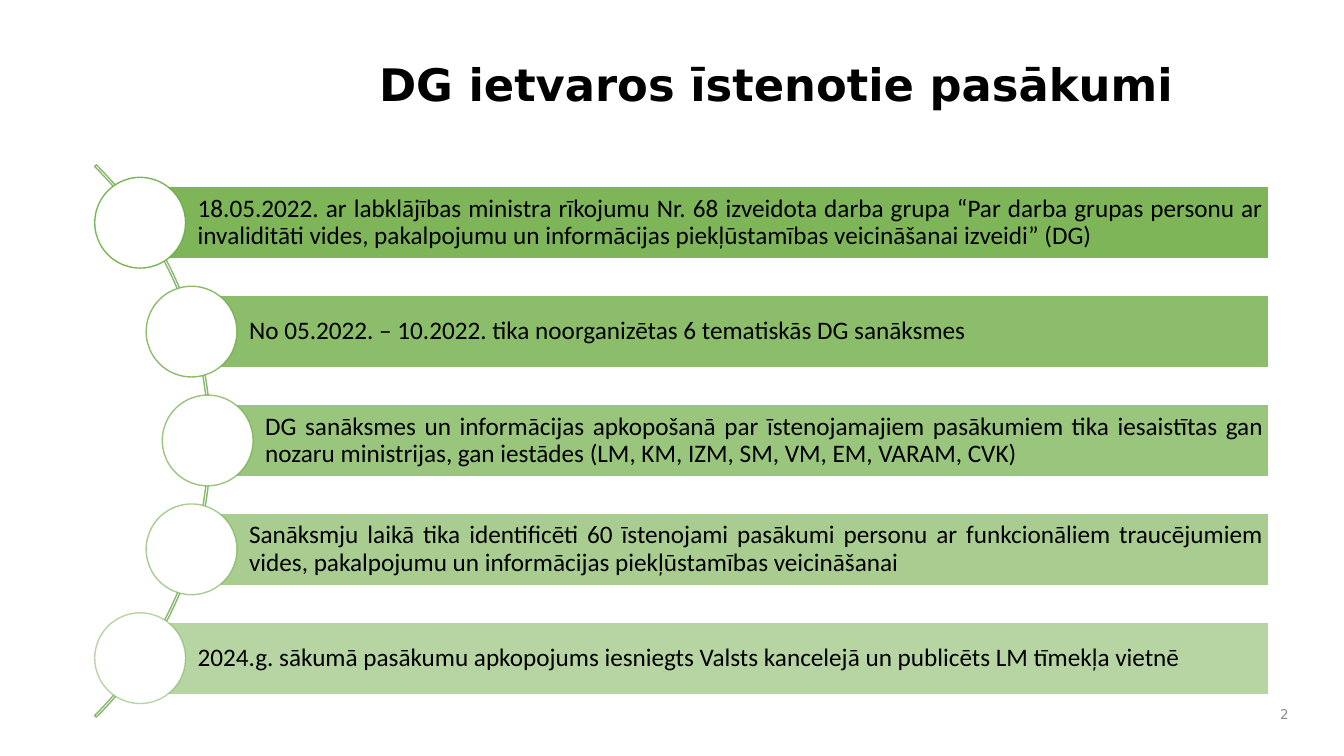
"""Builds the slide listing the activities carried out by the working group."""
from pptx import Presentation, util as u
from pptx.dml.color import RGBColor
from pptx.enum import shapes, text
from pptx.oxml.ns import qn
from lxml import etree

GREEN, WHITE = "70AD47", "FFFFFF"
BAR_RIGHT, BAR_HEIGHT, CIRCLE, STEP, FIRST_CENTER = 12.58, 0.72, 0.9, 1.08, 2.21

deck = Presentation()
deck.slide_width, deck.slide_height = u.Inches(13.33), u.Inches(7.5)
slide = deck.slides.add_slide(deck.slide_layouts[6])


def paint(fill, color, opacity=100):
    fill.solid()
    fill.fore_color.rgb = RGBColor.from_string(color)
    if opacity < 100:
        tint = fill._xPr.find(qn("a:solidFill"))[0]
        etree.SubElement(tint, qn("a:alpha"), val=str(opacity * 1000))


def write(shape, words, size, font="DejaVu Sans", color="000000", bold=False,
          align=text.PP_ALIGN.LEFT, spacing=1.0, insets=(0.1, 0.05, 0.1, 0.05)):
    frame = shape.text_frame
    frame.word_wrap = True
    frame.vertical_anchor = text.MSO_ANCHOR.MIDDLE
    (frame.margin_left, frame.margin_top,
     frame.margin_right, frame.margin_bottom) = map(u.Inches, insets)
    paragraph = frame.paragraphs[0]
    paragraph.alignment, paragraph.line_spacing = align, spacing
    run = paragraph.add_run()
    run.text = words
    run.font.size, run.font.name, run.font.bold = u.Pt(size), font, bold
    run.font.color.rgb = RGBColor.from_string(color)


title = slide.shapes.add_textbox(*map(u.Inches, (2.82, 0.42, 9.76, 0.89)))
write(title, "DG ietvaros īstenotie pasākumi", 32, bold=True,
      align=text.PP_ALIGN.CENTER, spacing=0.9)

arc = slide.shapes.add_shape(shapes.MSO_SHAPE.BLOCK_ARC,
                             *map(u.Inches, (-5.66, 0.5, 7.75, 7.75)))
for index, value in enumerate((189, 27, 0.003)):
    arc.adjustments[index] = value
arc.shadow.inherit = False
arc.fill.background()
paint(arc.line.fill, "88B76F")
arc.line.width = u.Pt(1)

activities = [
    (1.39, "18.05.2022. ar labklājības ministra rīkojumu Nr. 68 izveidota darba grupa “Par darba grupas "
           "personu ar invaliditāti vides, pakalpojumu un informācijas piekļūstamības veicināšanai izveidi” (DG)"),
    (1.9, "No 05.2022. – 10.2022. tika noorganizētas 6 tematiskās DG sanāksmes"),
    (2.06, "DG sanāksmes un informācijas apkopošanā par īstenojamajiem pasākumiem tika iesaistītas gan "
           "nozaru ministrijas, gan iestādes (LM, KM, IZM, SM, VM, EM, VARAM, CVK)"),
    (1.9, "Sanāksmju laikā tika identificēti 60 īstenojami pasākumi personu ar funkcionāliem traucējumiem "
          "vides, pakalpojumu un informācijas piekļūstamības veicināšanai"),
    (1.39, "2024.g. sākumā pasākumu apkopojums iesniegts Valsts kancelejā un publicēts LM tīmekļa vietnē"),
]
for row, (left, activity) in enumerate(activities):
    center = FIRST_CENTER + row * STEP
    opacity = 90 - 10 * row
    bar = slide.shapes.add_shape(
        shapes.MSO_SHAPE.RECTANGLE, u.Inches(left), u.Inches(center - BAR_HEIGHT / 2),
        u.Inches(BAR_RIGHT - left), u.Inches(BAR_HEIGHT))
    paint(bar.fill, GREEN, opacity)
    paint(bar.line.fill, WHITE)
    write(bar, activity, 18, font="Calibri", align=text.PP_ALIGN.JUSTIFY,
          spacing=0.9, insets=(0.57, 0.05, 0.05, 0.05))
    circle = slide.shapes.add_shape(
        shapes.MSO_SHAPE.OVAL, u.Inches(left - CIRCLE / 2), u.Inches(center - CIRCLE / 2),
        u.Inches(CIRCLE), u.Inches(CIRCLE))
    paint(circle.fill, WHITE)
    paint(circle.line.fill, GREEN, opacity)
    for part in (bar, circle):
        part.shadow.inherit = False
        part.line.width = u.Pt(1)

page_number = slide.shapes.add_textbox(*map(u.Inches, (12.44, 6.92, 0.44, 0.33)))
write(page_number, "2", 9.6, color="8C8C8C", align=text.PP_ALIGN.RIGHT)

deck.save("out.pptx")
